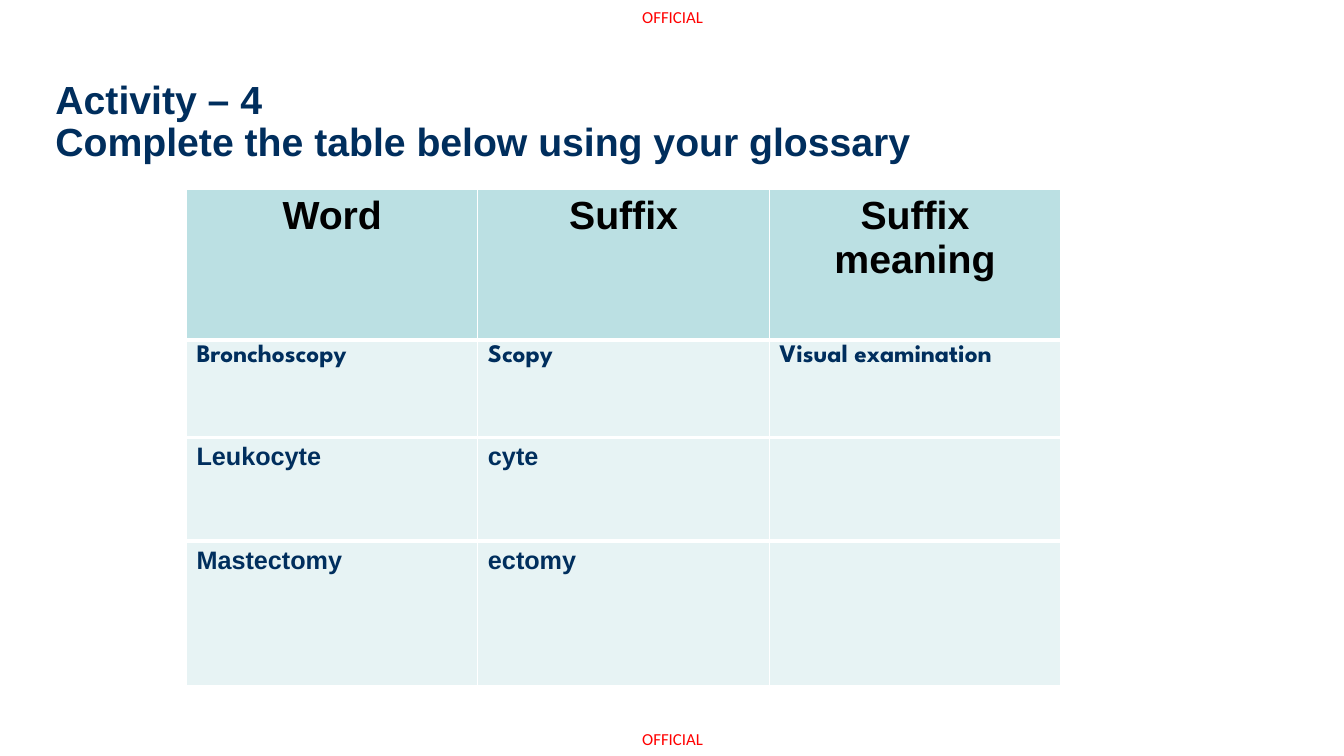
from lxml import etree
from pptx import Presentation
from pptx.dml.color import RGBColor
from pptx.enum.text import MSO_ANCHOR, MSO_AUTO_SIZE, PP_ALIGN
from pptx.oxml.ns import qn
from pptx.util import Emu, Pt

CENTER, LEFT = PP_ALIGN.CENTER, PP_ALIGN.LEFT
TOP = MSO_ANCHOR.TOP
NO_AUTOFIT = MSO_AUTO_SIZE.NONE
EMU_PER_PX = 9144  # 100 px to the inch
TITLE_ONLY_LAYOUT = 5

NAVY, RED, BLACK, WHITE = "002E5D", "FF0000", "000000", "FFFFFF"
HEADER_FILL, BODY_FILL = "BBE0E3", "E7F3F4"

TITLE_LINES = ["Activity – 4", "Complete the table below using your glossary"]
GLOSSARY = [
    ["Word", "Suffix", "Suffix meaning"],
    ["Bronchoscopy", "Scopy", "Visual examination"],
    ["Leukocyte", "cyte", ""],
    ["Mastectomy", "ectomy", ""],
]
COLUMN_WIDTH = 289
ROW_HEIGHTS = [149, 97, 103, 143]


def px(length):
    return Emu(length * EMU_PER_PX)


def color(hex_string):
    return RGBColor.from_string(hex_string)


def add_run(paragraph, text, size, font_name, hex_color, bold=False):
    run = paragraph.add_run()
    run.text = text
    run.font.size = Pt(size)
    run.font.name = font_name
    run.font.bold = bold
    run.font.color.rgb = color(hex_color)


def place(shape, left, top, width, height):
    shape.left, shape.top = px(left), px(top)
    shape.width, shape.height = px(width), px(height)


def clear_margins(text_frame):
    text_frame.margin_left = text_frame.margin_right = 0
    text_frame.margin_top = text_frame.margin_bottom = 0


def format_title(title):
    place(title, 55, 80, 864, 79)
    text_frame = title.text_frame
    clear_margins(text_frame)
    text_frame.word_wrap = True
    text_frame.auto_size = NO_AUTOFIT
    text_frame.vertical_anchor = TOP
    paragraph = text_frame.paragraphs[0]
    paragraph.alignment = LEFT
    paragraph.line_spacing = 0.9
    for index, line in enumerate(TITLE_LINES):
        if index:
            paragraph.add_line_break()
        add_run(paragraph, line, 28, "Arial", NAVY, bold=True)


def add_marking(slide, top):
    """Add the classification marking at the given height."""
    box = slide.shapes.add_textbox(px(637), px(top), px(64), px(20))
    clear_margins(box.text_frame)
    box.text_frame.word_wrap = False
    add_run(box.text_frame.paragraphs[0], "OFFICIAL", 12, "Calibri", RED)


def set_borders(cell, top, bottom):
    """Draw white borders; must run before the cell gets its fill."""
    properties = cell._tc.get_or_add_tcPr()
    for side, width in (("lnL", 1), ("lnR", 1), ("lnT", top), ("lnB", bottom)):
        line = etree.SubElement(properties, qn(f"a:{side}"), w=str(Pt(width)))
        fill = etree.SubElement(line, qn("a:solidFill"))
        etree.SubElement(fill, qn("a:srgbClr"), val=WHITE)


def format_cell(cell, text, row_index):
    is_header = row_index == 0
    is_last = row_index == len(GLOSSARY) - 1
    set_borders(cell, 1 if is_header else 3, 1 if is_last else 3)
    cell.fill.solid()
    cell.fill.fore_color.rgb = color(HEADER_FILL if is_header else BODY_FILL)
    paragraph = cell.text_frame.paragraphs[0]
    paragraph.alignment = CENTER if is_header else LEFT
    if not text:
        return
    if is_header:
        add_run(paragraph, text, 28, "Arial", BLACK, bold=True)
    else:
        font_name = "League Spartan" if row_index == 1 else "Arial"
        add_run(paragraph, text, 18, font_name, NAVY, bold=True)


def add_glossary_table(slide):
    row_count, column_count = len(GLOSSARY), len(GLOSSARY[0])
    table = slide.shapes.add_table(
        row_count, column_count, px(185), px(188),
        px(COLUMN_WIDTH * column_count), px(sum(ROW_HEIGHTS)),
    ).table
    for column in table.columns:
        column.width = px(COLUMN_WIDTH)
    for row_index, (height, words) in enumerate(zip(ROW_HEIGHTS, GLOSSARY)):
        table.rows[row_index].height = px(height)
        for column_index, word in enumerate(words):
            format_cell(table.cell(row_index, column_index), word, row_index)


def main():
    presentation = Presentation()
    presentation.slide_width, presentation.slide_height = px(1333), px(750)
    layout = presentation.slide_layouts[TITLE_ONLY_LAYOUT]
    slide = presentation.slides.add_slide(layout)
    for top in (7, 723):
        add_marking(slide, top)
    format_title(slide.shapes.title)
    add_glossary_table(slide)
    presentation.save("out.pptx")


if __name__ == "__main__":
    main()
